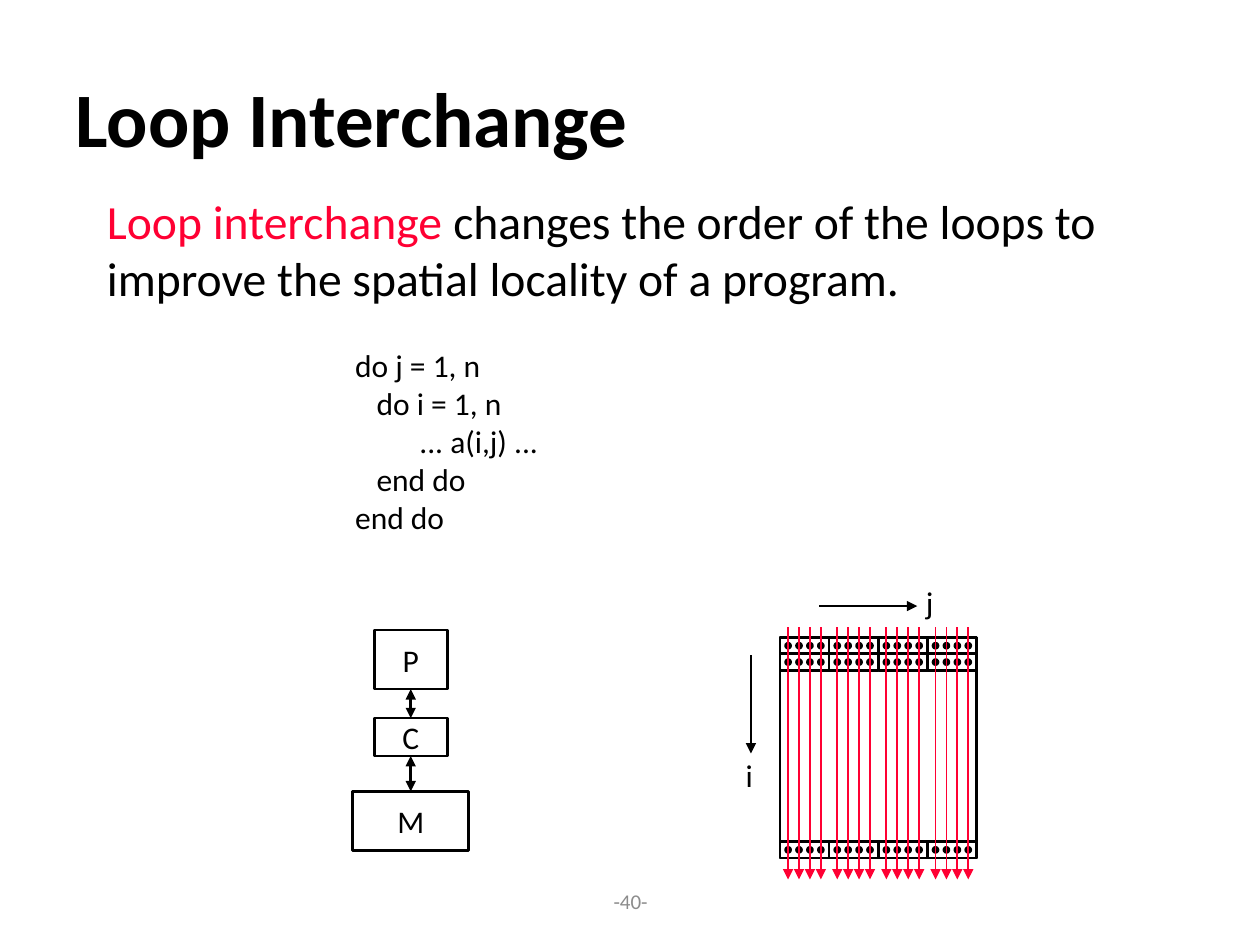
from dataclasses import dataclass
from itertools import product
from lxml.etree import SubElement
from pptx import Presentation
from pptx.dml.color import RGBColor as Rgb
from pptx.enum.shapes import MSO_CONNECTOR as Conn, MSO_SHAPE as Form
from pptx.enum.text import MSO_ANCHOR as Anchor, MSO_AUTO_SIZE as Fit, PP_ALIGN as Align
from pptx.oxml.ns import qn
from pptx.util import Inches, Pt


@dataclass(frozen=True)
class Theme:
    font: str = "Calibri"
    ink: Rgb = Rgb(0, 0, 0)
    paper: Rgb = Rgb(255, 255, 255)
    accent: Rgb = Rgb(255, 0, 51)
    muted: Rgb = Rgb(140, 140, 140)
    head: float = 44
    body: float = 27.2
    label: float = 18
    foot: float = 12
    rule: float = 1.5
    thin: float = 1


THEME = Theme()


def style(part, size, color=THEME.ink, bold=False):
    for run in part.runs:
        font = run.font
        font.name, font.size, font.bold = THEME.font, Pt(size), bold
        font.color.rgb = color


def add_text(shapes, box, text, size, color=THEME.ink, bold=False, wrap=True):
    shape = shapes.add_textbox(*map(Inches, box))
    frame = shape.text_frame
    frame.word_wrap = wrap
    frame.text = text
    for part in frame.paragraphs:
        style(part, size, color, bold)
    return frame


def add_form(shapes, form, box, fill=THEME.paper):
    shape = shapes.add_shape(form, *map(Inches, box))
    shape.shadow.inherit = False
    shape.fill.solid()
    shape.fill.fore_color.rgb = fill
    shape.line.color.rgb = THEME.ink
    shape.line.width = Pt(THEME.rule)
    return shape


def add_arrow(shapes, start, end, color=THEME.ink, width=THEME.rule, both=False):
    arrow = shapes.add_connector(Conn.STRAIGHT, *map(Inches, start + end))
    arrow.line.color.rgb = color
    arrow.line.width = Pt(width)
    line = arrow.line._get_or_add_ln()
    for tag in ("a:headEnd", "a:tailEnd") if both else ("a:tailEnd",):
        SubElement(line, qn(tag), type="triangle")
    SubElement(arrow._element.spPr, qn("a:effectLst"))


def add_title(shapes, box):
    frame = add_text(shapes, box, "Loop Interchange", THEME.head, bold=True)
    frame.vertical_anchor = Anchor.MIDDLE


def add_intro(shapes, box):
    frame = add_text(shapes, box, "Loop interchange", THEME.body, THEME.accent)
    part = frame.paragraphs[0]
    part.space_before = Pt(5)
    part.add_run().text = " changes the order of the loops to improve the spatial locality of a program."
    style(part, THEME.body)
    part.runs[0].font.color.rgb = THEME.accent


def add_code(shapes, box):
    lines = [("do j = 1, n", 0), ("do i = 1, n", 0.17), ("... a(i,j) ...", 0.51),
             ("end do", 0.17), ("end do", 0)]
    frame = add_text(shapes, box, "\n".join(text for text, _ in lines), THEME.label)
    for part, (_, indent) in zip(frame.paragraphs, lines):
        part._p.get_or_add_pPr().set("marL", str(Inches(indent)))


def add_memory(shapes, box):
    left, top, width, height = box
    mid = left + width / 2
    levels = [("P", 0, 0.58, 0.47), ("C", 0.7, 0.58, 0.3), ("M", 1.28, width, height - 1.28)]
    for text, down, wide, high in levels:
        shape = add_form(shapes, Form.RECTANGLE, (mid - wide / 2, top + down, wide, high))
        frame = shape.text_frame
        frame.text = text
        frame.word_wrap = False
        frame.vertical_anchor = Anchor.MIDDLE
        frame.paragraphs[0].alignment = Align.CENTER
        style(frame.paragraphs[0], THEME.label)
    for (_, down, _, high), (_, below, _, _) in zip(levels, levels[1:]):
        add_arrow(shapes, (mid, top + below), (mid, top + down + high), both=True)


def add_array(shapes, box):
    left, top, width, height = box
    cols, dots, high, size = 4, 4, 0.13, 0.04
    wide = width / cols
    inset, gap = wide / 6, wide * 2 / 9
    grid = shapes.add_group_shape().shapes
    add_form(grid, Form.RECTANGLE, box)
    for down, col in product((0, high, height - high), range(cols)):
        x, y = left + col * wide, top + down
        add_form(grid, Form.RECTANGLE, (x, y, wide, high))
        for dot in range(dots):
            spot = (x + inset + dot * gap - size / 2, y + (high - size) / 2, size, size)
            add_form(grid, Form.OVAL, spot, THEME.ink)
    scan = shapes.add_group_shape().shapes
    for col, dot in product(range(cols), range(dots)):
        x = left + col * wide + inset + dot * gap
        add_arrow(scan, (x, top - 0.08), (x, top + height + 0.17), THEME.accent, THEME.thin)
    add_arrow(scan, (left - 0.23, top + 0.14), (left - 0.23, top + 0.92))
    add_arrow(scan, (left + 0.31, top - 0.25), (left + 1.09, top - 0.25))
    for text, x, y, wide in (("i", -0.37, 0.89, 0.27), ("j", 1.06, -0.48, 0.3)):
        frame = add_text(scan, (left + x, top + y, wide, 0.4), text, THEME.label, wrap=False)
        frame.auto_size = Fit.SHAPE_TO_FIT_TEXT


def add_number(shapes, box):
    frame = add_text(shapes, box, "-40-", THEME.foot, THEME.muted)
    frame.vertical_anchor = Anchor.MIDDLE
    frame.paragraphs[0].alignment = Align.CENTER


def main():
    deck = Presentation()
    deck.slide_width, deck.slide_height = Inches(10), Inches(7.5)
    shapes = deck.slides.add_slide(deck.slide_layouts[6]).shapes
    add_number(shapes, (3.42, 6.95, 3.17, 0.4))
    add_title(shapes, (0.5, 0.3, 9, 1.25))
    add_intro(shapes, (0.75, 1.47, 8.5, 0.83))
    add_code(shapes, (2.72, 2.7, 1.95, 1.6))
    add_memory(shapes, (2.8, 5, 0.92, 1.75))
    add_array(shapes, (6.19, 5.06, 1.56, 1.75))
    deck.save("out.pptx")


if __name__ == "__main__":
    main()
